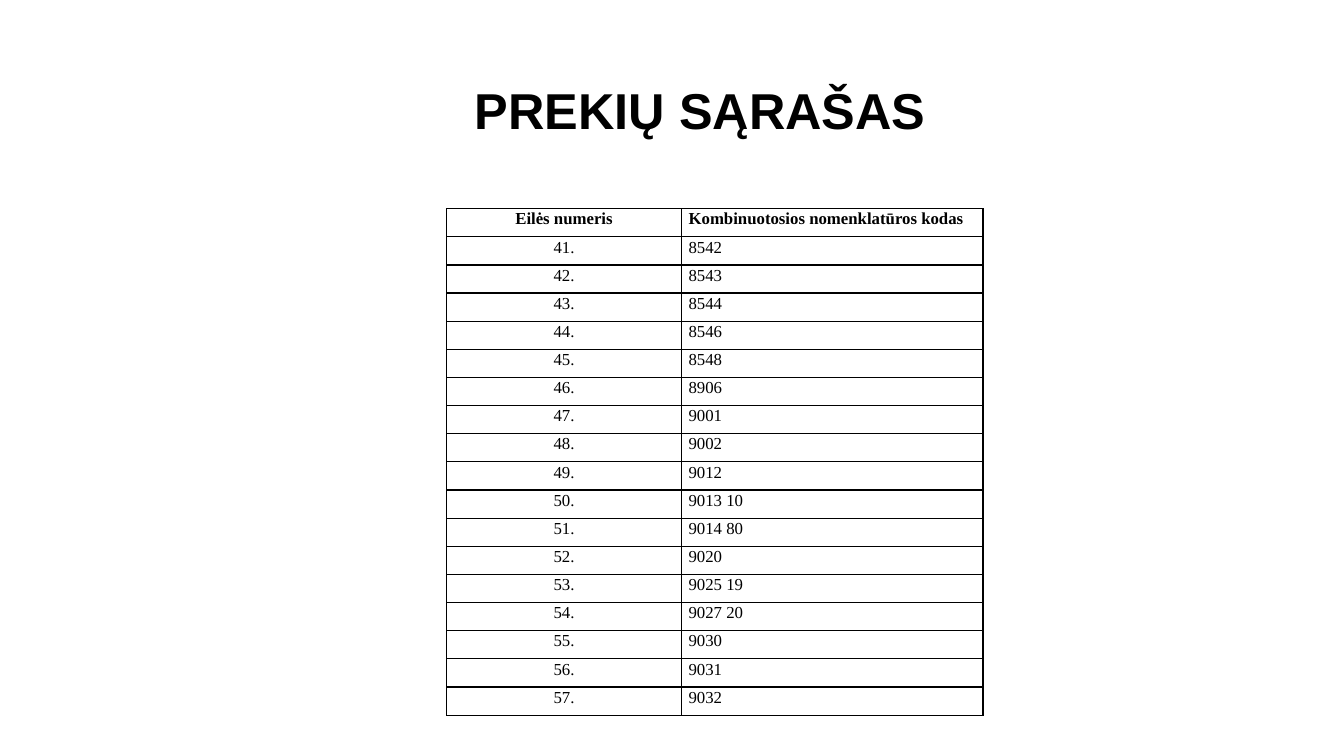
from lxml import etree
from pptx import Presentation
from pptx.dml.color import RGBColor
from pptx.enum.text import MSO_ANCHOR, PP_ALIGN
from pptx.oxml.ns import qn
from pptx.util import Inches, Pt

CENTER = PP_ALIGN.CENTER
JUSTIFY = PP_ALIGN.JUSTIFY
MIDDLE = MSO_ANCHOR.MIDDLE

BLACK = "000000"
BORDER_SIDES = ("lnL", "lnR", "lnT", "lnB")
TITLE_FONT = {"name": "Arial", "size": Pt(36), "bold": True}
HEADER_FONT = {"name": "Times New Roman", "size": Pt(12), "bold": True}
BODY_FONT = {**HEADER_FONT, "bold": False}
TITLE_PARAGRAPH = {"alignment": CENTER, "line_spacing": 0.9}
CELL_PARAGRAPH = {"line_spacing": 1.07, "space_after": Pt(8)}
CELL_MARGINS = {
    "margin_left": Inches(0.07),
    "margin_right": Inches(0.07),
    "margin_top": 0,
    "margin_bottom": 0,
}

HEADERS = ("Eilės numeris", "Kombinuotosios nomenklatūros kodas")
FIRST_NUMBER = 41
CODES = (
    "8542", "8543", "8544", "8546", "8548", "8906", "9001", "9002", "9012",
    "9013 10", "9014 80", "9020", "9025 19", "9027 20", "9030", "9031", "9032",
)
COLUMN_WIDTHS = (2.33, 2.99)
COLUMN_ALIGNMENTS = (CENTER, JUSTIFY)


def color(hex_value):
    return RGBColor.from_string(hex_value)


def apply_format(target, values):
    for name, value in values.items():
        setattr(target, name, value)


def write_text(frame, text, paragraph_format, font_format):
    para = frame.paragraphs[0]
    apply_format(para, paragraph_format)
    span = para.add_run()
    span.text = text
    apply_format(span.font, font_format)
    span.font.color.rgb = color(BLACK)


def add_cell_borders(cell, hex_value, width):
    properties = cell._tc.get_or_add_tcPr()
    for side in BORDER_SIDES:
        line = etree.SubElement(properties, qn(f"a:{side}"), w=str(width))
        fill = etree.SubElement(line, qn("a:solidFill"))
        etree.SubElement(fill, qn("a:srgbClr"), val=hex_value)


def add_title(page, left, top, width, height):
    box = page.shapes.add_textbox(
        Inches(left), Inches(top), Inches(width), Inches(height))
    frame = box.text_frame
    # The wide left margin moves the centred title slightly to the right.
    apply_format(frame, {
        "word_wrap": True,
        "vertical_anchor": MIDDLE,
        "margin_left": Inches(0.65),
    })
    write_text(frame, "PREKIŲ SĄRAŠAS", TITLE_PARAGRAPH, TITLE_FONT)


def add_goods_table(page, left, top, height):
    numbered = [(f"{number}.", code)
                for number, code in enumerate(CODES, FIRST_NUMBER)]
    rows = [HEADERS, *numbered]
    table = page.shapes.add_table(
        len(rows), len(HEADERS), Inches(left), Inches(top),
        Inches(sum(COLUMN_WIDTHS)), Inches(height)).table
    apply_format(table, {"first_row": False, "horz_banding": False})
    for column, width in zip(table.columns, COLUMN_WIDTHS):
        column.width = Inches(width)
    for row_index, texts in enumerate(rows):
        font_format = BODY_FONT if row_index else HEADER_FONT
        for column_index, text in enumerate(texts):
            cell = table.cell(row_index, column_index)
            apply_format(cell, CELL_MARGINS)
            add_cell_borders(cell, BLACK, Pt(1))
            cell.fill.background()
            paragraph_format = {
                **CELL_PARAGRAPH, "alignment": COLUMN_ALIGNMENTS[column_index]}
            write_text(cell.text_frame, text, paragraph_format, font_format)


def main():
    deck = Presentation()
    deck.slide_width = Inches(13.33)
    deck.slide_height = Inches(7.5)
    page = deck.slides.add_slide(deck.slide_layouts[6])
    add_title(page, 0.92, 0.4, 11.5, 1.45)
    add_goods_table(page, 4.43, 2.07, 5.03)
    deck.save("out.pptx")


if __name__ == "__main__":
    main()
